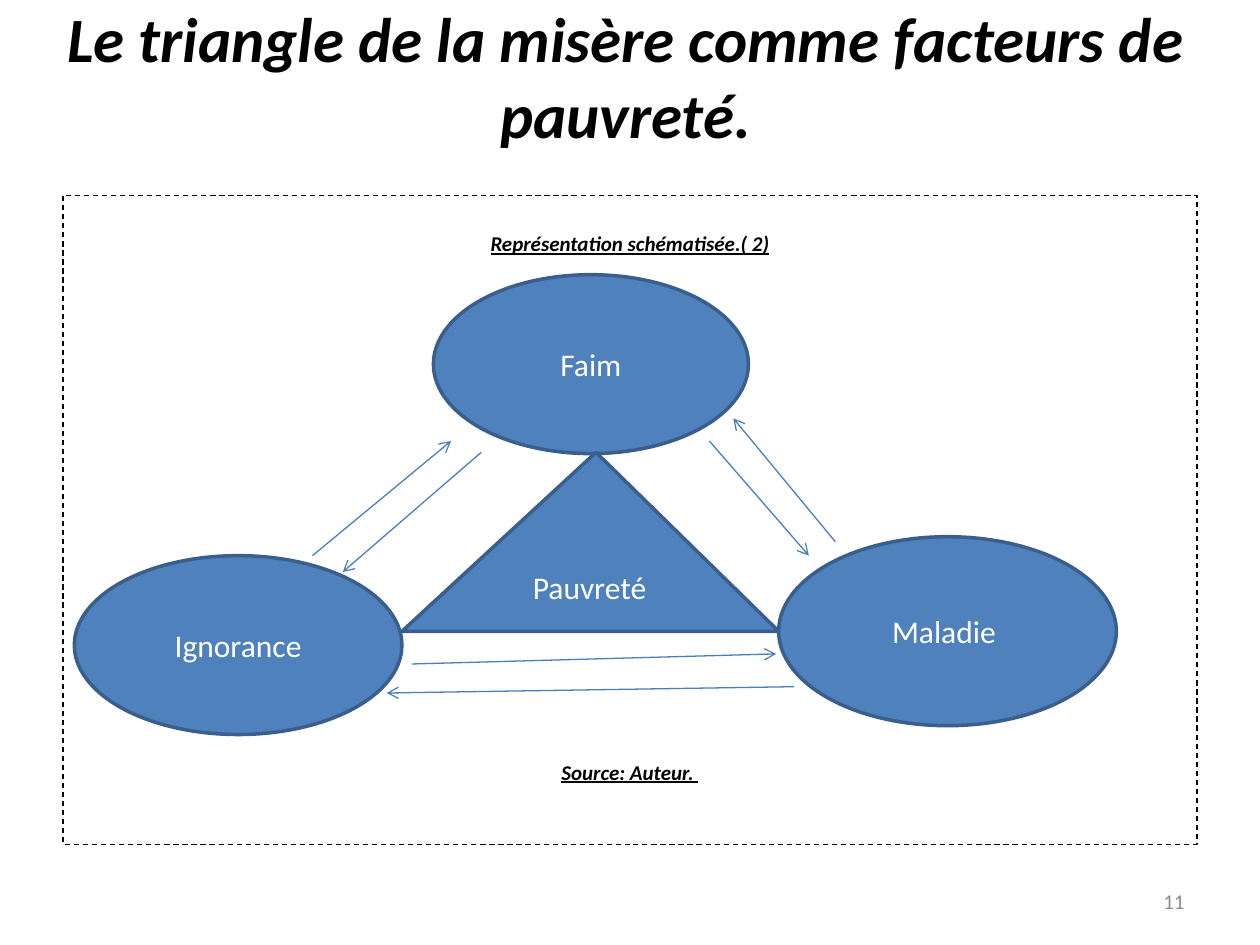
import pptx
import pptx.dml.color
import pptx.enum.dml
import pptx.enum.shapes
import pptx.enum.text
import pptx.oxml
import pptx.oxml.ns
import pptx.util

RGBColor = pptx.dml.color.RGBColor
BLACK = RGBColor(0x00, 0x00, 0x00)
WHITE = RGBColor(0xFF, 0xFF, 0xFF)
BLUE = RGBColor(0x4F, 0x81, 0xBD)
OUTLINE = RGBColor(0x3A, 0x5F, 0x8C)
ARROW = RGBColor(0x4B, 0x7E, 0xBC)
GREY = RGBColor(0x8C, 0x8C, 0x8C)

SHAPE = pptx.enum.shapes.MSO_SHAPE
ALIGN = pptx.enum.text.PP_ALIGN
ANCHOR = pptx.enum.text.MSO_ANCHOR
COLUMNS, ROWS = 20, 15


def write(frame, text, size=18, color=WHITE, align=ALIGN.CENTER, before=0,
          bold=False, italic=False, underline=False):
    para = frame.paragraphs[0]
    if para.runs:
        para = frame.add_paragraph()
    para.alignment = align
    para.space_before = pptx.util.Pt(before)
    span = para.add_run()
    span.text = text
    font = span.font
    font.name = "Calibri"
    font.size = pptx.util.Pt(size)
    font.color.rgb = color
    font.bold, font.italic, font.underline = bold, italic, underline


class Page:
    def __init__(self, deck):
        self.cell_width = deck.slide_width / COLUMNS
        self.cell_height = deck.slide_height / ROWS
        self.shapes = deck.slides.add_slide(deck.slide_layouts[6]).shapes

    def place(self, column, row):
        return round(column * self.cell_width), round(row * self.cell_height)

    def area(self, column, row, width, height):
        return *self.place(column, row), *self.place(width, height)

    def text(self, area, text, margin=0.1, **style):
        box = self.shapes.add_textbox(*self.area(*area))
        frame = box.text_frame
        frame.word_wrap = True
        frame.vertical_anchor = ANCHOR.MIDDLE
        frame.margin_left = frame.margin_right = pptx.util.Inches(margin)
        write(frame, text, **style)

    def frame(self, area, captions):
        box = self.shapes.add_shape(SHAPE.RECTANGLE, *self.area(*area))
        box.shadow.inherit = False
        box.fill.background()
        box.line.color.rgb = BLACK
        box.line.width = pptx.util.Pt(0.75)
        box.line.dash_style = pptx.enum.dml.MSO_LINE.DASH
        frame = box.text_frame
        frame.word_wrap = True
        frame.vertical_anchor = ANCHOR.TOP
        frame.margin_top = pptx.util.Inches(0.28)
        for text, before in captions:
            write(frame, text, size=12, color=BLACK, before=before,
                  bold=True, italic=True, underline=True)

    def node(self, kind, area, text, peak=None):
        box = self.shapes.add_shape(kind, *self.area(*area))
        box.shadow.inherit = False
        if peak is not None:
            box.adjustments[0] = peak
        box.fill.solid()
        box.fill.fore_color.rgb = BLUE
        box.line.color.rgb = OUTLINE
        box.line.width = pptx.util.Pt(2)
        box.text_frame.word_wrap = True
        box.text_frame.vertical_anchor = ANCHOR.MIDDLE
        write(box.text_frame, text)

    def arrow(self, start, end):
        line = self.shapes.add_connector(
            pptx.enum.shapes.MSO_CONNECTOR.STRAIGHT,
            *self.place(*start), *self.place(*end))
        line.line.color.rgb = ARROW
        line.line.width = pptx.util.Pt(0.75)
        tip = pptx.oxml.parse_xml(
            f'<a:tailEnd {pptx.oxml.ns.nsdecls("a")} type="arrow"/>')
        line.line._get_or_add_ln().append(tip)
        effects = pptx.oxml.parse_xml(
            f'<a:effectLst {pptx.oxml.ns.nsdecls("a")}/>')
        line._element.spPr.append(effects)


def main():
    deck = pptx.Presentation()
    deck.slide_width = pptx.util.Inches(10)
    deck.slide_height = pptx.util.Inches(7.5)
    page = Page(deck)

    page.text((0.86, 0.26, 18.14, 1.88),
              "Le triangle de la misère comme facteurs de pauvreté.",
              margin=0.05, size=36, color=BLACK, bold=True, italic=True)
    page.frame((1, 3.1, 18, 10.3),
               [("Représentation schématisée.( 2)", 0),
                ("Source: Auteur. ", 287.6)])

    for area, text in [((1.18, 8.82, 5.2, 2.84), "Ignorance"),
                       ((6.88, 4.36, 5, 2.84), "Faim"),
                       ((12.36, 8.52, 5.36, 3), "Maladie ")]:
        page.node(SHAPE.OVAL, area, text)
    page.node(SHAPE.ISOSCELES_TRIANGLE, (6.38, 7.18, 5.98, 2.84),
              "Pauvreté ", peak=0.515)

    for start, end in [((4.96, 8.82), (7.16, 7)),
                       ((11.26, 7), (12.84, 8.82)),
                       ((6.54, 10.54), (12.32, 10.38)),
                       ((12.6, 10.9), (6.14, 11)),
                       ((7.64, 7.18), (5.44, 9.08)),
                       ((13.26, 8.6), (11.64, 6.64))]:
        page.arrow(start, end)

    page.text((14.34, 13.9, 4.66, 0.8), "11",
              size=12, color=GREY, align=ALIGN.RIGHT)
    deck.save("out.pptx")


if __name__ == "__main__":
    main()
